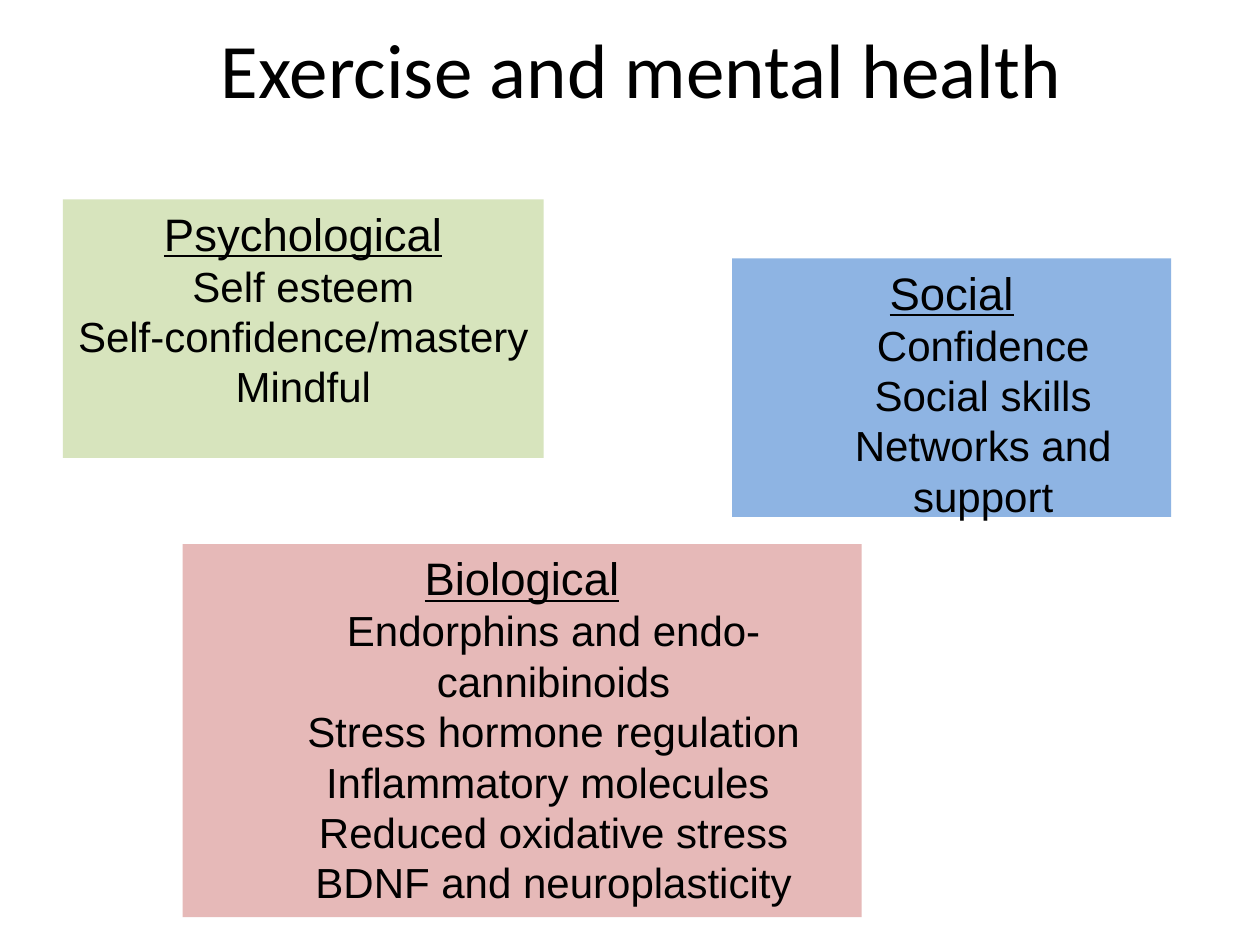
from dataclasses import dataclass

from pptx import Presentation
from pptx import util as u
from pptx.dml import color
from pptx.enum import text


@dataclass(frozen=True)
class Theme:
    """Colours, fonts and type sizes of the slide."""
    ink: str = "000000"
    paper: str = "FFFFFF"
    psychological: str = "D7E4BD"
    social: str = "8EB4E3"
    biological: str = "E6B9B8"
    title_font: str = "Calibri"
    body_font: str = "Arial"
    title_size: int = 44
    heading_size: int = 26
    item_size: int = 24


THEME = Theme()
ITEM_INDENT = u.Cm(1.27)


def place(shape, left, top, width, height):
    """Set the position and size of a shape in centimetres."""
    shape.left, shape.top = u.Cm(left), u.Cm(top)
    shape.width, shape.height = u.Cm(width), u.Cm(height)


def fill_shape(shape, fill):
    """Give a shape a solid fill."""
    shape.fill.solid()
    shape.fill.fore_color.rgb = color.RGBColor.from_string(fill)


def format_paragraph(paragraph, font, size, underline=False):
    """Centre a paragraph and format its runs."""
    paragraph.alignment = text.PP_ALIGN.CENTER
    for run in paragraph.runs:
        run.font.name = font
        run.font.size = u.Pt(size)
        run.font.underline = underline
        run.font.color.rgb = color.RGBColor.from_string(THEME.ink)


def set_title(slide, title):
    """Fill and format the title placeholder."""
    shape = slide.shapes.title
    place(shape, 3.2, 0.08, 19.46, 2.57)
    fill_shape(shape, THEME.paper)
    shape.text_frame.text = title
    shape.text_frame.vertical_anchor = text.MSO_ANCHOR.MIDDLE
    format_paragraph(shape.text_frame.paragraphs[0], THEME.title_font, THEME.title_size)


def add_factor_box(slide, bounds, fill, heading, items, indented=True):
    """Add a coloured box with an underlined heading and centred items."""
    shape = slide.shapes.add_textbox(0, 0, 0, 0)
    place(shape, *bounds)
    fill_shape(shape, fill)
    frame = shape.text_frame
    frame.word_wrap = True
    frame.auto_size = text.MSO_AUTO_SIZE.NONE
    frame.text = heading
    format_paragraph(frame.paragraphs[0], THEME.body_font, THEME.heading_size, True)
    for item in items:
        paragraph = frame.add_paragraph()
        paragraph.text = item
        format_paragraph(paragraph, THEME.body_font, THEME.item_size)
        if indented:
            paragraph.level = 1
            properties = paragraph._p.get_or_add_pPr()
            properties.set("marL", str(ITEM_INDENT))
            properties.set("indent", "0")


def main():
    """Build and save the slide."""
    presentation = Presentation()
    presentation.slide_width, presentation.slide_height = u.Cm(25.4), u.Cm(19.05)
    slide = presentation.slides.add_slide(presentation.slide_layouts[5])
    set_title(slide, "Exercise and mental health")
    add_factor_box(
        slide, (1.27, 4.02, 9.69, 5.21), THEME.psychological, "Psychological",
        ["Self esteem", "Self-confidence/mastery", "Mindful"], indented=False)
    add_factor_box(
        slide, (14.76, 5.21, 8.85, 5.21), THEME.social, "Social",
        ["Confidence", "Social skills", "Networks and support"])
    add_factor_box(
        slide, (3.68, 10.97, 13.69, 7.52), THEME.biological, "Biological",
        ["Endorphins and endo-cannibinoids", "Stress hormone regulation",
         "Inflammatory molecules ", "Reduced oxidative stress",
         "BDNF and neuroplasticity"])
    presentation.save("out.pptx")


if __name__ == "__main__":
    main()
